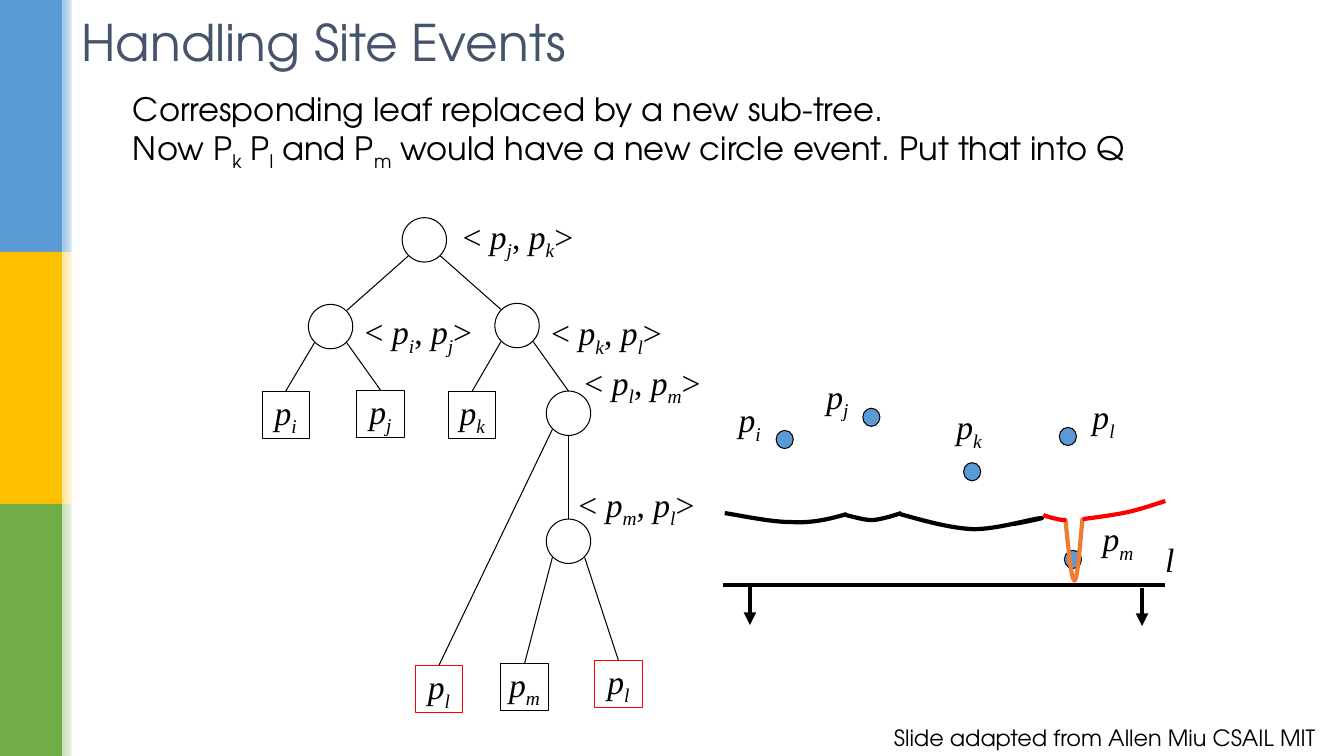
from dataclasses import dataclass
from itertools import groupby
from math import sqrt

from lxml import etree
from pptx import Presentation
from pptx.dml.color import RGBColor
from pptx.enum.shapes import MSO_CONNECTOR, MSO_SHAPE
from pptx.enum.text import MSO_ANCHOR, MSO_AUTO_SIZE, PP_ALIGN
from pptx.oxml.ns import qn
from pptx.util import Emu, Pt

RECTANGLE, ELLIPSE = MSO_SHAPE.RECTANGLE, MSO_SHAPE.OVAL
STRAIGHT = MSO_CONNECTOR.STRAIGHT
TOP_SIDE = 0
PX = 9144  # EMU in one px, 100 px to the inch
SLIDE_WIDTH, SLIDE_HEIGHT = Emu(12192000), Emu(6858000)
THIN, THICK = 0.75, 3
CIRCLE, LEAF = 44, 47

COLOURS = {
    "black": "000000", "white": "FFFFFF", "title": "44546A", "red": "FF0000",
    "orange": "ED7D31", "blue": "5B9BD5", "yellow": "FFC000", "green": "70AD47",
    "pale blue": "9DC3E6", "pale yellow": "FFE699", "pale green": "C5E0B4",
}
SANS = {"name": "TeX Gyre Adventor"}
MATH = {"name": "Times New Roman", "size": Pt(24)}
CENTRED = {"vertical_anchor": MSO_ANCHOR.MIDDLE}
FITTED = {"auto_size": MSO_AUTO_SIZE.SHAPE_TO_FIT_TEXT}


@dataclass
class Node:
    """A tree node: an inner one is a circle, a leaf is a square holding its text."""
    left: int
    top: int
    leaf: str = ""
    colour: str = "black"

    @property
    def size(self) -> int:
        return LEAF if self.leaf else CIRCLE

    def rim(self, across: int, down: int) -> tuple[int, int]:
        """Point on the outline in one of the eight compass directions."""
        radius = self.size / 2
        reach = radius / sqrt(2) if across and down else radius
        return (round(self.left + radius + across * reach),
                round(self.top + radius + down * reach))


@dataclass
class Edge:
    parent: str
    child: str
    leave: int  # -1 lower left, 0 bottom, 1 lower right
    enter: int = 0  # -1 upper left, 0 top, 1 upper right


@dataclass
class Label:
    text: str
    left: int
    top: int
    width: int
    wrap: bool = False


@dataclass
class Curve:
    """Joined cubic Bezier pieces: a start, then three points for each piece."""
    colour: str
    points: list[tuple[int, int]]


BANDS = [("blue", "pale blue"), ("yellow", "pale yellow"), ("green", "pale green")]
NODES = {
    "root": Node(399, 216), "ij": Node(306, 302), "kl": Node(491, 301),
    "lm": Node(542, 388), "ml": Node(542, 515),
    "i": Node(260, 388, "p_i"), "j": Node(354, 387, "p_j"), "k": Node(445, 388, "p_k"),
    "m": Node(497, 658, "p_m"),
    "left l": Node(412, 660, "p_l", "red"), "right l": Node(590, 655, "p_l", "red"),
}
EDGES = [
    Edge("root", "ij", -1, 1), Edge("root", "kl", 1, -1),
    Edge("ij", "i", -1), Edge("ij", "j", 1), Edge("kl", "k", -1), Edge("kl", "lm", 1),
    Edge("lm", "left l", -1), Edge("lm", "ml", 0),
    Edge("ml", "m", -1), Edge("ml", "right l", 1),
]
LABELS = [
    Label("< p_j, p_k>", 449, 209, 132), Label("< p_i, p_j>", 352, 304, 128),
    Label("< p_k, p_l>", 537, 305, 132), Label("< p_l, p_m>", 570, 354, 138),
    Label("< p_m, p_l>", 564, 475, 138),
    Label("p_i", 723, 391, 43, True), Label("p_j", 810, 368, 43, True),
    Label("p_k", 939, 398, 47, True), Label("p_l", 1074, 388, 43, True),
    Label("p_m", 1084, 509, 53, True), Label("l", 1146, 530, 29, True),
]
SITES = [(1056, 546), (956, 459), (1051, 424), (856, 405), (770, 427)]
BEACH_LINE = [
    Curve("black", [(719, 509), (743, 513), (766, 518), (786, 518),
                    (806, 519), (823, 515), (840, 510)]),
    Curve("black", [(839, 511), (848, 513), (857, 516), (866, 516),
                    (875, 515), (885, 512), (894, 509)]),
    Curve("black", [(893, 510), (918, 517), (943, 524), (966, 525), (990, 525),
                    (1026, 514), (1033, 514), (1039, 513), (1022, 517), (1005, 520)]),
    Curve("orange", [(1057, 515), (1060, 545), (1063, 576), (1066, 576),
                     (1069, 575), (1071, 545), (1074, 514)]),
    Curve("red", [(1035, 511), (1040, 513), (1045, 514), (1049, 515),
                  (1053, 516), (1056, 516), (1058, 516)]),
    Curve("red", [(1074, 515), (1089, 513), (1105, 511), (1119, 508),
                  (1132, 505), (1150, 499), (1156, 497)]),
]
SWEEP_LINE = ((717, 580), (1156, 580))
SWEEP_ARROWS = [((744, 581), (744, 620)), ((1133, 583), (1133, 621))]


def rgb(colour: str) -> RGBColor:
    return RGBColor.from_string(COLOURS[colour])


def set_format(target, values: dict) -> None:
    for name, value in values.items():
        setattr(target, name, value)


def set_line(shape, colour: str, points: float) -> None:
    shape.line.color.rgb = rgb(colour)
    shape.line.width = Pt(points)


def add_plain_shape(page, kind, left: int, top: int, width: int, height: int,
                    fill: str = "", line: str = ""):
    shape = page.shapes.add_shape(kind, *(Emu(n * PX) for n in (left, top, width, height)))
    shape.shadow.inherit = False
    if fill:
        shape.fill.solid()
        shape.fill.fore_color.rgb = rgb(fill)
    else:
        shape.fill.background()
    if line:
        set_line(shape, line, THIN)
    else:
        shape.line.fill.background()
    return shape


def write(para, text: str, font: dict, colour: str = "black") -> None:
    """Add spans; the letter after an underscore is lowered, math letters are italic."""
    is_math = font is MATH
    for index, piece in enumerate(text.split("_")):
        parts = [(piece[0], True)] if index else []
        rest = piece[1:] if index else piece
        groups = groupby(rest, key=lambda letter: is_math and letter.isalpha())
        parts += [("".join(group), False) for _, group in groups]
        for words, lowered in parts:
            span = para.add_run()
            span.text = words
            set_format(span.font, font | {"italic": is_math and words.isalpha()})
            span.font.color.rgb = rgb(colour)
            if lowered:
                span.font._element.set("baseline", "-25000")


def add_text(page, lines: list[str], area: tuple[int, int, int, int], font: dict,
             frame: dict, align=PP_ALIGN.LEFT, colour: str = "black") -> None:
    box = page.shapes.add_textbox(*(Emu(n * PX) for n in area))
    set_format(box.text_frame, {"word_wrap": True} | frame)
    for index, line in enumerate(lines):
        para = box.text_frame.add_paragraph() if index else box.text_frame.paragraphs[0]
        para.alignment = align
        write(para, line, font, colour)


def add_line(page, start: tuple[int, int], end: tuple[int, int],
             points: float, arrow: bool = False):
    line = page.shapes.add_connector(STRAIGHT, *(Emu(n * PX) for n in start + end))
    set_line(line, "black", points)
    if arrow:
        etree.SubElement(line.line._get_or_add_ln(), qn("a:tailEnd"), type="triangle")
    etree.SubElement(line._element.spPr, qn("a:effectLst"))
    return line


def add_curve(page, curve: Curve) -> None:
    """Lay the control points as segments, then join each three into a Bezier piece."""
    start, *controls = curve.points
    builder = page.shapes.build_freeform(*start, scale=PX)
    builder.add_line_segments(controls, close=False)
    shape = builder.convert_to_shape()
    segments = list(shape._element.iter(qn("a:lnTo")))
    for first in range(0, len(segments), 3):
        bezier = etree.Element(qn("a:cubicBezTo"))
        segments[first].addprevious(bezier)
        for segment in segments[first:first + 3]:
            bezier.append(segment[0])
            segment.getparent().remove(segment)
    shape.shadow.inherit = False
    shape.fill.background()
    set_line(shape, curve.colour, THICK)


def add_side_bands(page) -> None:
    for row, (strong, pale) in enumerate(BANDS):
        add_plain_shape(page, RECTANGLE, 0, row * 250, 62, 250, fill=strong)
        fade = add_plain_shape(page, RECTANGLE, 62, row * 250, 16, 250)
        fade.fill.gradient()
        fade.fill.gradient_angle = 0
        for stop, colour, position in zip(fade.fill.gradient_stops, (pale, "white"), (0, 1)):
            stop.color.rgb = rgb(colour)
            stop.position = position
    add_plain_shape(page, RECTANGLE, 71, 0, 5, 750, fill="white")


def add_tree(page) -> None:
    shapes = {}
    for name, node in NODES.items():
        kind = RECTANGLE if node.leaf else ELLIPSE
        shape = add_plain_shape(page, kind, node.left, node.top, node.size, node.size,
                                line=node.colour)
        if node.leaf:
            set_format(shape.text_frame, CENTRED | {"word_wrap": False})
            para = shape.text_frame.paragraphs[0]
            para.alignment = PP_ALIGN.CENTER
            write(para, node.leaf, MATH)
        shapes[name] = shape
    for edge in EDGES:
        child = NODES[edge.child]
        line = add_line(page, NODES[edge.parent].rim(edge.leave, 1),
                        child.rim(edge.enter, -1), THIN)
        if child.leaf:
            line.end_connect(shapes[edge.child], TOP_SIDE)


def main() -> None:
    deck = Presentation()
    deck.slide_width, deck.slide_height = SLIDE_WIDTH, SLIDE_HEIGHT
    page = deck.slides.add_slide(deck.slide_layouts[6])
    add_side_bands(page)
    add_text(page, ["Handling Site Events"], (71, 0, 1048, 83),
             SANS | {"size": Pt(36)}, CENTRED, colour="title")
    add_text(page, ["Corresponding leaf replaced by a new sub-tree.",
                    "Now P_k P_l and P_m would have a new circle event. Put that into Q"],
             (122, 84, 1024, 88), SANS | {"size": Pt(23)}, FITTED | {"word_wrap": False})
    add_tree(page)
    for left, top in SITES:
        add_plain_shape(page, ELLIPSE, left, top, 17, 18, fill="blue", line="black")
    add_line(page, *SWEEP_LINE, THICK)
    for start, end in SWEEP_ARROWS:
        add_line(page, start, end, THICK, arrow=True)
    for curve in BEACH_LINE:
        add_curve(page, curve)
    for label in LABELS:
        add_text(page, [label.text], (label.left, label.top, label.width, 50),
                 MATH, FITTED | {"word_wrap": label.wrap})
    add_text(page, ["Slide adapted from Allen Miu CSAIL MIT"], (859, 708, 474, 47),
             SANS | {"size": Pt(16)}, CENTRED, PP_ALIGN.CENTER)
    deck.save("out.pptx")


if __name__ == "__main__":
    main()
